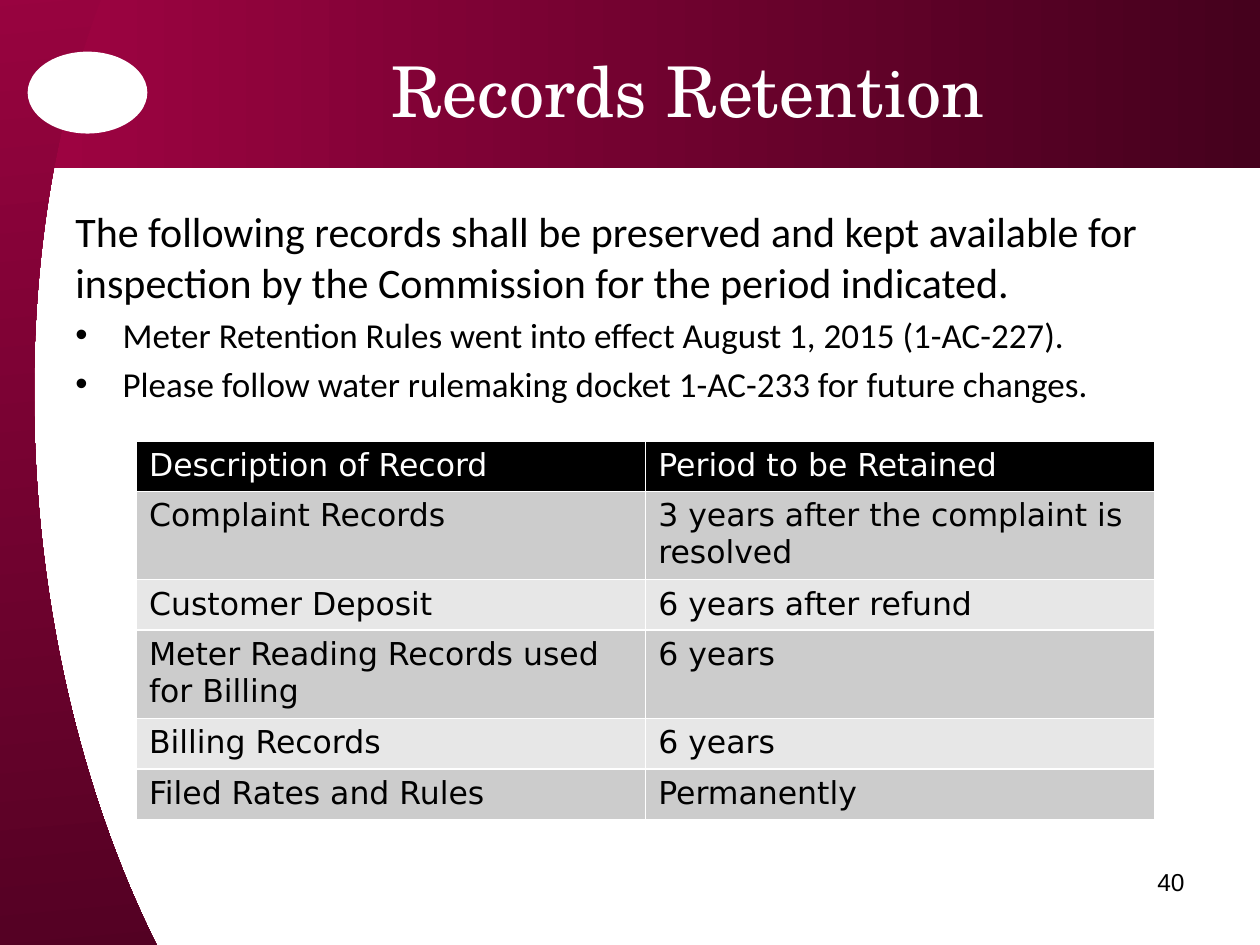
from dataclasses import dataclass

import pptx
import pptx.dml.color
import pptx.enum.shapes
import pptx.enum.text
import pptx.oxml
import pptx.oxml.ns
import pptx.util

Pt = pptx.util.Pt
SHAPE = pptx.enum.shapes.MSO_SHAPE
ALIGN = pptx.enum.text.PP_ALIGN
ANCHOR = pptx.enum.text.MSO_ANCHOR
NSDECL = pptx.oxml.ns.nsdecls("a")

CRIMSON, MAROON = "A10343", "45011D"
WHITE, BLACK = "FFFFFF", "000000"
BAND_FILLS = ("CCCCCC", "E7E7E7")


@dataclass
class Box:
    left: float
    top: float
    width: float
    height: float

    def lengths(self) -> tuple:
        return tuple(Pt(v) for v in (self.left, self.top, self.width, self.height))


@dataclass
class Style:
    name: str
    size: float
    color: str = BLACK


@dataclass
class Para:
    text: str
    style: Style
    bullet: bool = False
    align: ALIGN = ALIGN.LEFT
    before: float = 0


@dataclass
class Decoration:
    kind: SHAPE
    box: Box
    angle: float = 0
    gradient_angle: float | None = None


HEADING = Style("TeX Gyre Schola", 40, WHITE)
LEAD = Style("Calibri", 24)
POINT = Style("Calibri", 20)
NUMBER = Style("Arial", 14)
HEADER_CELL = Style("DejaVu Sans", 18, WHITE)
BODY_CELL = Style("DejaVu Sans", 18)

DECORATIONS = [
    Decoration(SHAPE.RECTANGLE, Box(0, 0, 720, 96), gradient_angle=0),
    Decoration(SHAPE.MOON, Box(-77.8, -59.8, 200.9, 707.8), -5.2, 270),
    Decoration(SHAPE.OVAL, Box(15.8, 29.5, 68.4, 46.8)),
]
INTRO = [
    Para("The following records shall be preserved and kept available for "
         "inspection by the Commission for the period indicated.", LEAD),
    Para("Meter Retention Rules went into effect August 1, 2015 (1-AC-227).",
         POINT, bullet=True, before=4),
    Para("Please follow water rulemaking docket 1-AC-233 for future changes.",
         POINT, bullet=True, before=4),
]
RECORDS = [
    ("Description of Record", "Period to be Retained"),
    ("Complaint Records", "3 years after the complaint is resolved"),
    ("Customer Deposit", "6 years after refund"),
    ("Meter Reading Records used for Billing", "6 years"),
    ("Billing Records", "6 years"),
    ("Filed Rates and Rules", "Permanently"),
]
ROW_HEIGHT = 28.1


def rgb(color: str) -> pptx.dml.color.RGBColor:
    return pptx.dml.color.RGBColor.from_string(color)


def fill_solid(fill, color: str) -> None:
    fill.solid()
    fill.fore_color.rgb = rgb(color)


def write(tf, paras: list[Para]) -> None:
    tf.word_wrap = True
    for i, para in enumerate(paras):
        p = tf.paragraphs[0] if i == 0 else tf.add_paragraph()
        p.alignment = para.align
        p.space_before = Pt(para.before)
        if para.bullet:
            pPr = p._p.get_or_add_pPr()
            pPr.set("marL", str(Pt(27)))
            pPr.set("indent", str(-Pt(27)))
            for tag in ('a:buFont {} typeface="Arial"', 'a:buChar {} char="•"'):
                pPr.append(pptx.oxml.parse_xml(f"<{tag.format(NSDECL)}/>"))
        r = p.add_run()
        r.text = para.text
        formats = {"name": para.style.name, "size": Pt(para.style.size), "bold": False}
        for key, value in formats.items():
            setattr(r.font, key, value)
        r.font.color.rgb = rgb(para.style.color)


def add_decoration(s, item: Decoration) -> None:
    sp = s.shapes.add_shape(item.kind, *item.box.lengths())
    sp.shadow.inherit = False
    sp.line.fill.background()
    sp.rotation = item.angle
    if item.gradient_angle is None:
        fill_solid(sp.fill, WHITE)
        return
    sp.fill.gradient()
    sp.fill.gradient_angle = item.gradient_angle
    for stop, color in zip(sp.fill.gradient_stops, (CRIMSON, MAROON)):
        stop.color.rgb = rgb(color)


def add_title(s, text: str, box: Box) -> None:
    sp = s.shapes.title
    sp.element.getparent().append(sp.element)  # bring in front of the band
    for key, value in zip(("left", "top", "width", "height"), box.lengths()):
        setattr(sp, key, value)
    sp.text_frame.vertical_anchor = ANCHOR.MIDDLE
    sp.text_frame.auto_size = pptx.enum.text.MSO_AUTO_SIZE.NONE
    write(sp.text_frame, [Para(text, HEADING, align=ALIGN.CENTER)])


def add_text(s, paras: list[Para], box: Box) -> None:
    write(s.shapes.add_textbox(*box.lengths()).text_frame, paras)


def add_borders(cell) -> None:
    tcPr = cell._tc.get_or_add_tcPr()
    for i, side in enumerate(("lnL", "lnR", "lnT", "lnB")):
        tcPr.insert(i, pptx.oxml.parse_xml(
            f'<a:{side} {NSDECL} w="{Pt(1)}"><a:solidFill>'
            f'<a:srgbClr val="{WHITE}"/></a:solidFill></a:{side}>'))


def add_records(s, rows: list[tuple[str, str]], box: Box) -> None:
    table = s.shapes.add_table(len(rows), len(rows[0]), *box.lengths()).table
    for i, texts in enumerate(rows):
        table.rows[i].height = Pt(ROW_HEIGHT)
        style = BODY_CELL if i else HEADER_CELL
        color = BAND_FILLS[(i - 1) % 2] if i else BLACK
        for j, text in enumerate(texts):
            cell = table.cell(i, j)
            fill_solid(cell.fill, color)
            add_borders(cell)
            write(cell.text_frame, [Para(text, style)])


def main() -> None:
    prs = pptx.Presentation()
    prs.slide_width, prs.slide_height = Pt(720), Pt(540)
    s = prs.slides.add_slide(prs.slide_layouts.get_by_name("Title Only"))
    fill_solid(s.background.fill, WHITE)
    for item in DECORATIONS:
        add_decoration(s, item)
    add_title(s, "Records Retention", Box(102, 12, 582, 78))
    add_text(s, INTRO, Box(36, 114, 648, 384))
    add_text(s, [Para("40", NUMBER, align=ALIGN.RIGHT)], Box(516, 492, 168, 37.5))
    add_records(s, RECORDS, Box(78, 252, 582, ROW_HEIGHT * len(RECORDS)))
    prs.save("out.pptx")


if __name__ == "__main__":
    main()
